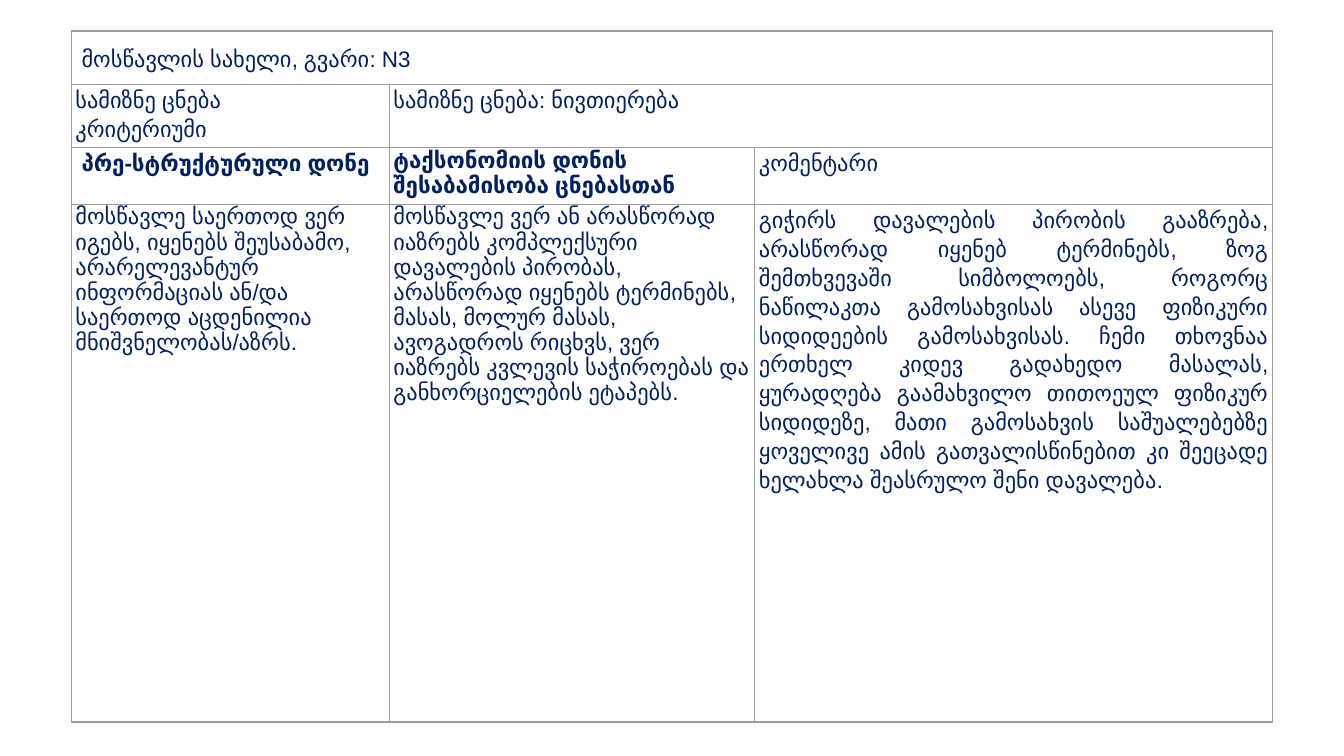
from itertools import accumulate

from lxml.etree import SubElement
from pptx import Presentation
from pptx.dml.color import RGBColor
from pptx.enum.text import MSO_ANCHOR as Anchor, PP_ALIGN as Align
from pptx.oxml.ns import qn
from pptx.util import Pt

# Content: each cell is (row, column, column span, paragraphs, format)
CELLS = [
    (0, 0, 3, ["მოსწავლის სახელი, გვარი: N3"],
     {"spacing": 1.15, "inset": 5.5, "anchor": Anchor.MIDDLE}),
    (1, 0, 1, ["სამიზნე ცნება", "კრიტერიუმი"], {"spacing": 1.15}),
    (1, 1, 2, ["სამიზნე ცნება: ნივთიერება"], {"spacing": 1.15}),
    (2, 0, 1, ["პრე-სტრუქტურული დონე"],
     {"spacing": 1.15, "inset": 5.5, "bold": True}),
    (2, 1, 1, ["ტაქსონომიის დონის შესაბამისობა ცნებასთან"], {"bold": True}),
    (2, 2, 1, ["კომენტარი"], {"spacing": 1.15}),
    (3, 0, 1, ["მოსწავლე საერთოდ ვერ იგებს, იყენებს შეუსაბამო, "
               "არარელევანტურ ინფორმაციას ან/და საერთოდ აცდენილია "
               "მნიშვნელობას/აზრს."], {}),
    (3, 1, 1, ["მოსწავლე ვერ ან არასწორად იაზრებს კომპლექსური დავალების "
               "პირობას, არასწორად იყენებს ტერმინებს, მასას, მოლურ მასას, "
               "ავოგადროს რიცხვს, ვერ იაზრებს კვლევის საჭიროებას და "
               "განხორციელების ეტაპებს."], {}),
    (3, 2, 1, ["გიჭირს დავალების პირობის გააზრება, არასწორად იყენებ "
               "ტერმინებს, ზოგ შემთხვევაში სიმბოლოებს, როგორც ნაწილაკთა "
               "გამოსახვისას ასევე ფიზიკური სიდიდეების გამოსახვისას. ჩემი "
               "თხოვნაა ერთხელ კიდევ გადახედო მასალას, ყურადღება "
               "გაამახვილო თითოეულ ფიზიკურ სიდიდეზე, მათი გამოსახვის "
               "საშუალებებზე ყოველივე ამის გათვალისწინებით კი შეეცადე "
               "ხელახლა შეასრულო შენი დავალება."],
     {"spacing": 1.15, "align": Align.JUSTIFY}),
]

THEME = {"font": "Arial", "size": 12, "text": "002060",
         "border": "9E9E9E", "border_width": 0.75, "inset": 2.2}

# Layout in points
SLIDE_SIZE = (720, 405)
TABLE_LEFT, TABLE_TOP = 38.2, 16.6
COLUMN_WIDTHS = [170.4, 195.8, 277.4]
ROW_HEIGHTS = [28.8, 33.8, 30.4, 277.2]


def draw_borders(cell):
    properties = cell._tc.get_or_add_tcPr()
    for side in ("a:lnL", "a:lnR", "a:lnT", "a:lnB"):
        line = SubElement(properties, qn(side), w=str(Pt(THEME["border_width"])))
        fill = SubElement(line, qn("a:solidFill"))
        SubElement(fill, qn("a:srgbClr"), val=THEME["border"])


def fill_cell(cell, paragraphs, spacing=1.0, inset=THEME["inset"],
              anchor=Anchor.TOP, bold=False, align=Align.LEFT):
    cell.margin_left, cell.margin_right = Pt(inset), Pt(THEME["inset"])
    cell.margin_top = cell.margin_bottom = Pt(0)
    cell.vertical_anchor = anchor
    cell.text_frame.text = "\n".join(paragraphs)
    for paragraph in cell.text_frame.paragraphs:
        paragraph.alignment = align
        paragraph.line_spacing = spacing
        for run in paragraph.runs:
            run.font.name = THEME["font"]
            run.font.size = Pt(THEME["size"])
            run.font.bold = bold
            run.font.color.rgb = RGBColor.from_string(THEME["text"])


presentation = Presentation()
presentation.slide_width, presentation.slide_height = map(Pt, SLIDE_SIZE)
slide = presentation.slides.add_slide(presentation.slide_layouts[6])

# Table grid
table = slide.shapes.add_table(
    len(ROW_HEIGHTS), len(COLUMN_WIDTHS), Pt(TABLE_LEFT), Pt(TABLE_TOP),
    Pt(sum(COLUMN_WIDTHS)), Pt(sum(ROW_HEIGHTS))).table
table.first_row = table.horz_banding = False
for column, width in zip(table.columns, COLUMN_WIDTHS):
    column.width = Pt(width)
for row, height in zip(table.rows, ROW_HEIGHTS):
    row.height = Pt(height)
for cell in table.iter_cells():
    draw_borders(cell)
    cell.fill.background()

# Cell text
for row, column, span, paragraphs, cell_format in CELLS:
    cell = table.cell(row, column)
    if span > 1:
        cell.merge(table.cell(row, column + span - 1))
    fill_cell(cell, paragraphs, **cell_format)

presentation.save("out.pptx")
